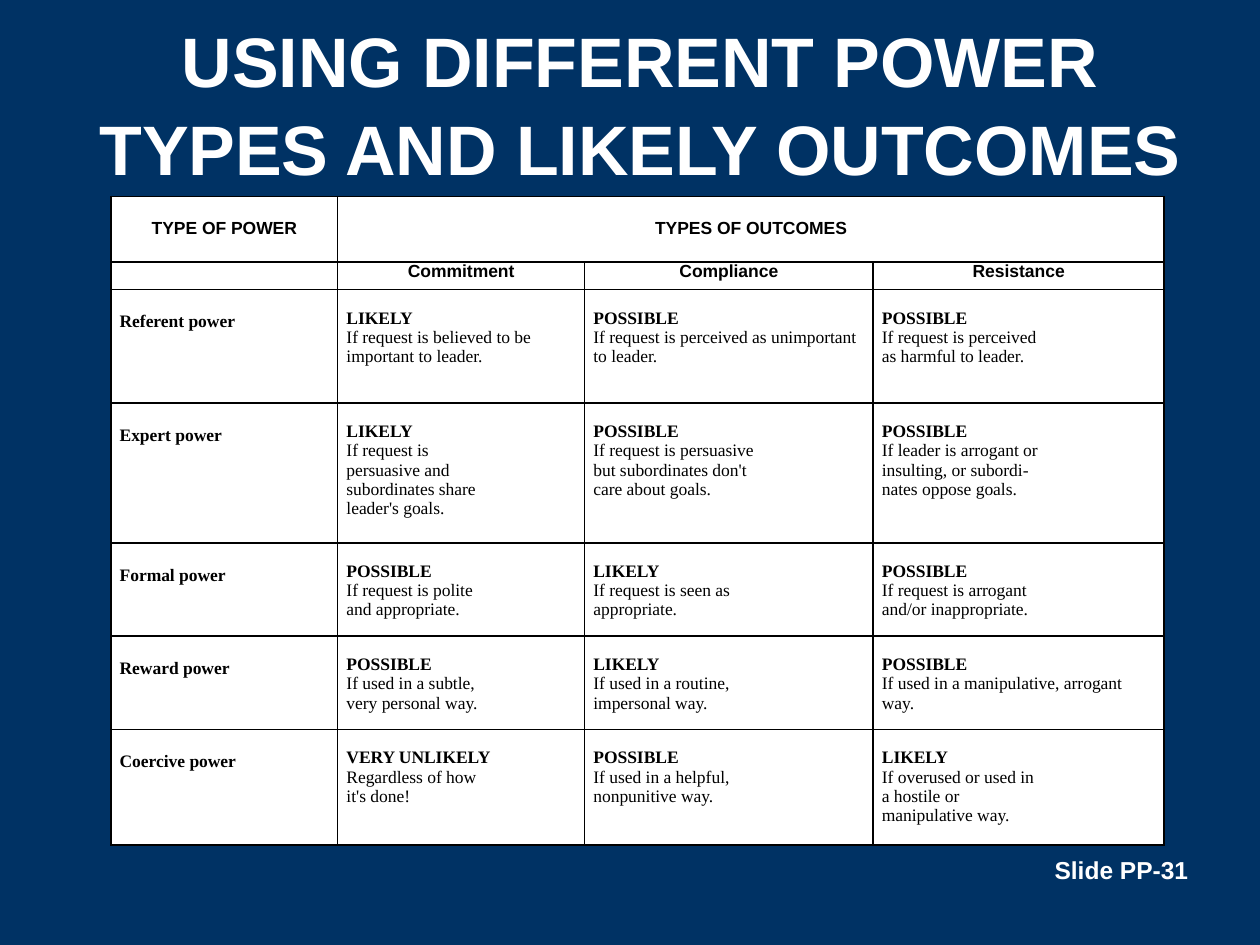
from lxml import etree
from pptx import Presentation
from pptx.dml.color import RGBColor
from pptx.enum.text import MSO_ANCHOR, PP_ALIGN
from pptx.oxml.ns import qn
from pptx.util import Inches, Pt

LEFT, CENTER, RIGHT = PP_ALIGN.LEFT, PP_ALIGN.CENTER, PP_ALIGN.RIGHT
TOP, MIDDLE = MSO_ANCHOR.TOP, MSO_ANCHOR.MIDDLE
NAVY, WHITE, BLACK = "003264", "FFFFFF", "000000"
SANS, SERIF = "Arial", "Times New Roman"
BORDER_SIDES = ("a:lnL", "a:lnR", "a:lnT", "a:lnB")

COLUMN_WIDTHS = (1.8, 1.96, 2.29, 2.31)
ROW_HEIGHTS = (0.52, 0.22, 0.9, 1.11, 0.74, 0.74, 0.92)
OUTCOMES = ("Commitment", "Compliance", "Resistance")
POWERS = (
    ("Referent power",
     "LIKELY\nIf request is believed to be important to leader.",
     "POSSIBLE\nIf request is perceived as unimportant to leader.",
     "POSSIBLE\nIf request is perceived\nas harmful to leader."),
    ("Expert power",
     "LIKELY\nIf request is\npersuasive and\nsubordinates share\nleader's goals.",
     "POSSIBLE\nIf request is persuasive\nbut subordinates don't\ncare about goals.",
     "POSSIBLE\nIf leader is arrogant or\ninsulting, or subordi-\nnates oppose goals."),
    ("Formal power",
     "POSSIBLE\nIf request is polite\nand appropriate.",
     "LIKELY\nIf request is seen as\nappropriate.",
     "POSSIBLE\nIf request is arrogant\nand/or inappropriate."),
    ("Reward power",
     "POSSIBLE\nIf used in a subtle,\nvery personal way.",
     "LIKELY\nIf used in a routine,\nimpersonal way.",
     "POSSIBLE\nIf used in a manipulative, arrogant way."),
    ("Coercive power",
     "VERY UNLIKELY\nRegardless of how\nit's done!",
     "POSSIBLE\nIf used in a helpful,\nnonpunitive way.",
     "LIKELY\nIf overused or used in\na hostile or\nmanipulative way."),
)


def color(value):
    """Turn a hex string into a colour."""
    return RGBColor.from_string(value)


def write_text(frame, text, size=10, font=SANS, ink=BLACK, align=LEFT, spacing=None):
    """Write one paragraph per line, the first of them bold."""
    frame.word_wrap = True
    for index, line in enumerate(text.split("\n")):
        paragraph = frame.add_paragraph() if index else frame.paragraphs[0]
        paragraph.alignment = align
        paragraph.line_spacing = spacing
        run = paragraph.add_run()
        run.text = line
        run.font.size = Pt(size)
        run.font.name = font
        run.font.bold = index == 0
        run.font.color.rgb = color(ink)


class SlideBuilder:
    """Hold the slide and its style, and add elements to it."""

    def __init__(self, slide, background=NAVY, ink=WHITE, border_width=1):
        """Keep the style and paint the background."""
        self.slide = slide
        self.ink = ink
        self.border_width = border_width
        slide.background.fill.solid()
        slide.background.fill.fore_color.rgb = color(background)

    def text(self, text, left, top, width, height, anchor=TOP, **style):
        """Add a text box."""
        box = self.slide.shapes.add_textbox(
            Inches(left), Inches(top), Inches(width), Inches(height))
        box.text_frame.vertical_anchor = anchor
        write_text(box.text_frame, text, ink=self.ink, **style)

    def table(self, left, top, column_widths, row_heights):
        """Add a plain white table with borders."""
        table = self.slide.shapes.add_table(
            len(row_heights), len(column_widths), Inches(left), Inches(top),
            Inches(sum(column_widths)), Inches(sum(row_heights))).table
        table.first_row = table.horz_banding = False
        for column, width in zip(table.columns, column_widths):
            column.width = Inches(width)
        for row, height in zip(table.rows, row_heights):
            row.height = Inches(height)
        for cell in table.iter_cells():
            self.border(cell)
            cell.fill.solid()
            cell.fill.fore_color.rgb = color(WHITE)
        return table

    def border(self, cell):
        """Draw a black line on each side of a cell."""
        properties = cell._tc.get_or_add_tcPr()
        for side in BORDER_SIDES:
            line = etree.SubElement(properties, qn(side), w=str(Pt(self.border_width)))
            fill = etree.SubElement(line, qn("a:solidFill"))
            etree.SubElement(fill, qn("a:srgbClr"), val=BLACK)

    def cell(self, cell, text, inset=0, **style):
        """Fill a cell with text below a top inset."""
        cell.margin_left = cell.margin_right = Inches(0.07)
        cell.margin_top, cell.margin_bottom = Inches(inset), 0
        if text:
            write_text(cell.text_frame, text, **style)
        else:
            paragraph = cell.text_frame.paragraphs[0]
            etree.SubElement(paragraph._p, qn("a:endParaRPr"), sz="1000")


def main():
    """Build the slide and save it."""
    presentation = Presentation()
    presentation.slide_width, presentation.slide_height = Inches(10), Inches(7.5)
    builder = SlideBuilder(presentation.slides.add_slide(presentation.slide_layouts[6]))

    builder.text("USING DIFFERENT POWER TYPES AND LIKELY OUTCOMES",
                 0.37, 0.18, 9.42, 1.25, anchor=MIDDLE, size=40, align=CENTER, spacing=1.05)
    builder.text("Slide PP-31", 7.45, 6.74, 2.08, 0.5, size=14, align=RIGHT)

    table = builder.table(0.88, 1.56, COLUMN_WIDTHS, ROW_HEIGHTS)
    table.cell(0, 1).merge(table.cell(0, 3))
    for column, heading in enumerate(("TYPE OF POWER", "TYPES OF OUTCOMES")):
        builder.cell(table.cell(0, column), heading, inset=0.18, align=CENTER)
    for column, outcome in enumerate(("",) + OUTCOMES):
        builder.cell(table.cell(1, column), outcome, align=CENTER)
    for row, texts in enumerate(POWERS, start=2):
        for column, text in enumerate(texts):
            inset = 0.15 if column else 0.18
            builder.cell(table.cell(row, column), text, inset=inset, font=SERIF)

    presentation.save("out.pptx")


if __name__ == "__main__":
    main()
